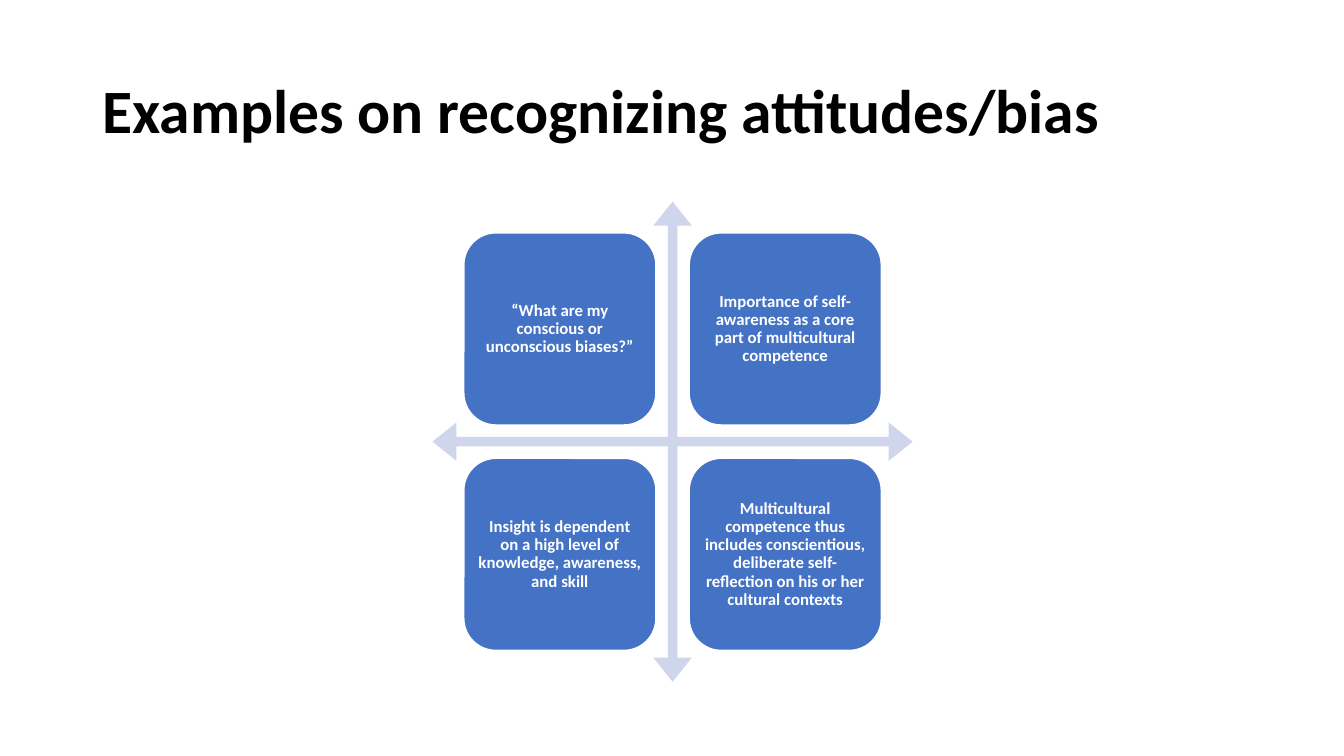
from pptx import Presentation
from pptx.dml.color import RGBColor
from pptx.enum.shapes import MSO_SHAPE
from pptx.enum.text import MSO_ANCHOR, MSO_AUTO_SIZE, PP_ALIGN
from pptx.util import Cm, Pt

QUAD_ARROW = MSO_SHAPE.QUAD_ARROW
ROUNDED_RECTANGLE = MSO_SHAPE.ROUNDED_RECTANGLE
MIDDLE = MSO_ANCHOR.MIDDLE
NO_AUTOFIT = MSO_AUTO_SIZE.NONE
LEFT = PP_ALIGN.LEFT
CENTER = PP_ALIGN.CENTER

COLORS = {
    "title": "000000",
    "arrows": "CFD5EA",
    "box": "4472C4",
    "white": "FFFFFF",
}


def write_text(shape, text, size, color, align, margin_x, margin_y):
    frame = shape.text_frame
    frame.word_wrap = True
    frame.auto_size = NO_AUTOFIT
    frame.vertical_anchor = MIDDLE
    frame.margin_left = frame.margin_right = Cm(margin_x)
    frame.margin_top = frame.margin_bottom = Cm(margin_y)
    paragraph = frame.paragraphs[0]
    paragraph.alignment = align
    paragraph.line_spacing = 0.9
    run = paragraph.add_run()
    run.text = text
    run.font.name = "Calibri"
    run.font.size = Pt(size)
    run.font.bold = True
    run.font.color.rgb = RGBColor.from_string(COLORS[color])


presentation = Presentation()
presentation.slide_width = Cm(33.87)
presentation.slide_height = Cm(19.05)
slide = presentation.slides.add_slide(presentation.slide_layouts[5])

title = slide.shapes.title
title.left, title.top = Cm(2.33), Cm(1.01)
title.width, title.height = Cm(29.21), Cm(3.68)
write_text(title, "Examples on recognizing attitudes/bias", size=44,
           color="title", align=LEFT, margin_x=0.25, margin_y=0.13)

arrows = slide.shapes.add_shape(QUAD_ARROW, Cm(10.9), Cm(5.08), Cm(12.1), Cm(12.1))
arrows.shadow.inherit = False
for index, adjustment in enumerate((0.02, 0.04, 0.05)):
    arrows.adjustments[index] = adjustment
arrows.fill.solid()
arrows.fill.fore_color.rgb = RGBColor.from_string(COLORS["arrows"])
arrows.line.fill.background()

EXAMPLES = [
    "“What are my conscious or unconscious biases?”",
    "Importance of self-awareness as a core part of multicultural competence",
    "Insight is dependent on a high level of knowledge, awareness, and skill",
    "Multicultural competence thus includes conscientious, deliberate "
    "self-reflection on his or her cultural contexts",
]
BOX_LEFT, BOX_TOP = 11.69, 5.87
BOX_SIZE, BOX_STEP = 4.84, 5.68

for index, example in enumerate(EXAMPLES):
    row, column = divmod(index, 2)
    box = slide.shapes.add_shape(
        ROUNDED_RECTANGLE,
        Cm(BOX_LEFT + column * BOX_STEP), Cm(BOX_TOP + row * BOX_STEP),
        Cm(BOX_SIZE), Cm(BOX_SIZE))
    box.shadow.inherit = False
    box.fill.solid()
    box.fill.fore_color.rgb = RGBColor.from_string(COLORS["box"])
    box.line.color.rgb = RGBColor.from_string(COLORS["white"])
    box.line.width = Pt(1)
    write_text(box, example, size=12, color="white", align=CENTER,
               margin_x=0.13, margin_y=0.13)

presentation.save("out.pptx")
